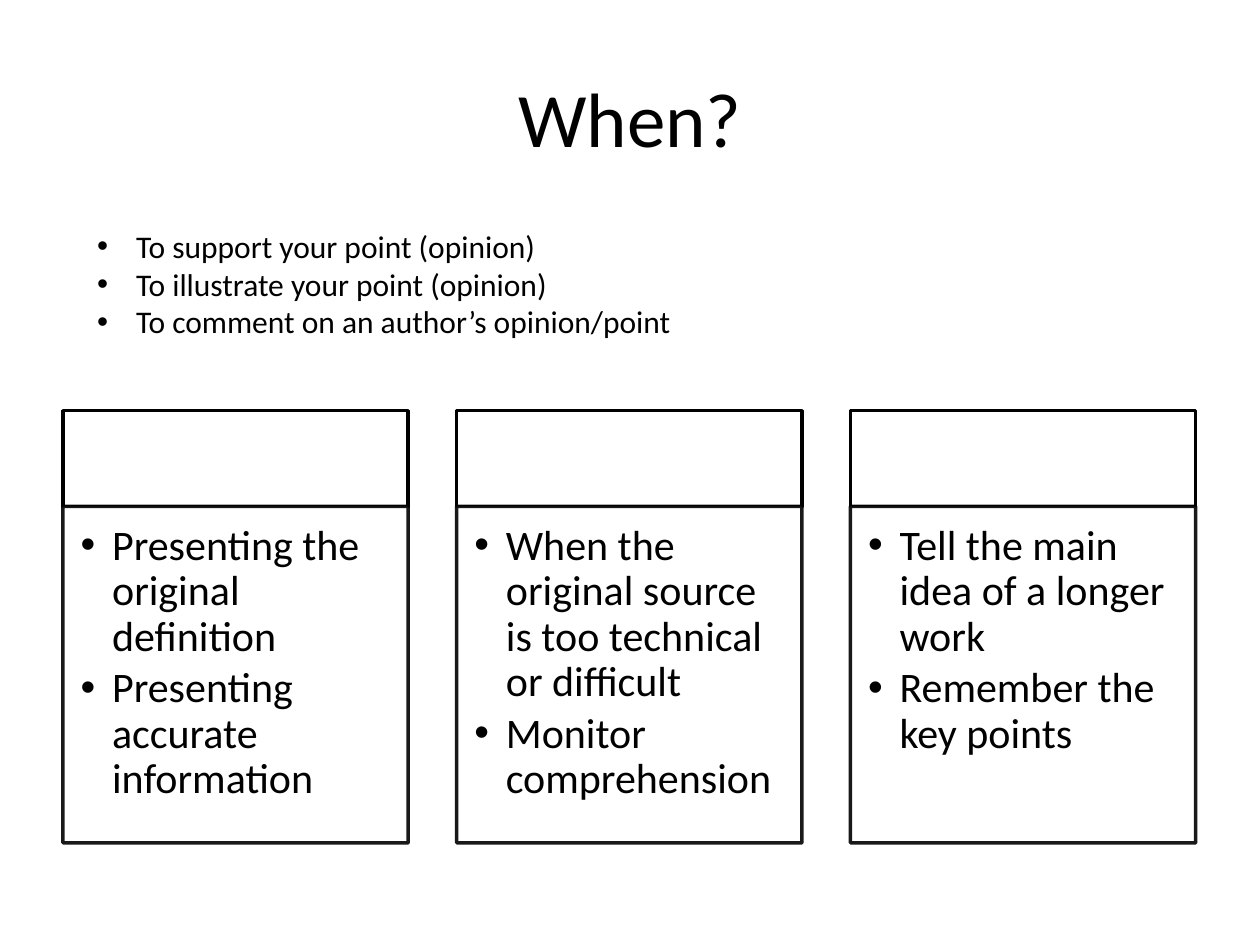
import pptx
import pptx.dml.color
import pptx.enum.shapes
import pptx.enum.text
import pptx.oxml
import pptx.oxml.ns
import pptx.util
from pptx.util import Inches

BLACK = pptx.dml.color.RGBColor(0x00, 0x00, 0x00)
WHITE = pptx.dml.color.RGBColor(0xFF, 0xFF, 0xFF)

REASONS = [
    "To support your point (opinion)",
    "To illustrate your point (opinion)",
    "To comment on an author’s opinion/point",
]
CARDS = [
    ["Presenting the original definition", "Presenting accurate information"],
    ["When the original source is too technical or difficult", "Monitor comprehension"],
    ["Tell the main idea of a longer work", "Remember the key points"],
]

CARD_LEFT, CARD_TOP = 0.5, 3.26
CARD_WIDTH, CARD_STEP = 2.74, 3.125
HEADER_HEIGHT, BODY_HEIGHT = 0.76, 2.67


class SlideBuilder:
    font_name = "Calibri"
    line_width = pptx.util.Pt(2)

    def __init__(self, presentation):
        self.slide = presentation.slides.add_slide(presentation.slide_layouts[1])

    def place(self, shape, left, top, width, height):
        shape.left, shape.top = Inches(left), Inches(top)
        shape.width, shape.height = Inches(width), Inches(height)

    def add_run(self, paragraph, text, size):
        run = paragraph.add_run()
        run.text = text
        run.font.name = self.font_name
        run.font.size = pptx.util.Pt(size)
        run.font.color.rgb = BLACK

    def title(self, text, *box):
        shape = self.slide.shapes.title
        self.place(shape, *box)
        shape.text_frame.vertical_anchor = pptx.enum.text.MSO_ANCHOR.MIDDLE
        paragraph = shape.text_frame.paragraphs[0]
        paragraph.alignment = pptx.enum.text.PP_ALIGN.CENTER
        self.add_run(paragraph, text, 44)

    def bullets(self, text_frame, items, size, indent, line_spacing=1.0, space_after=0):
        text_frame.word_wrap = True
        text_frame.vertical_anchor = pptx.enum.text.MSO_ANCHOR.TOP
        for index, item in enumerate(items):
            paragraph = text_frame.add_paragraph() if index else text_frame.paragraphs[0]
            paragraph.alignment = pptx.enum.text.PP_ALIGN.LEFT
            paragraph.line_spacing = line_spacing
            paragraph.space_before = pptx.util.Pt(0)
            paragraph.space_after = pptx.util.Pt(space_after)
            properties = paragraph._p.get_or_add_pPr()
            properties.set("marL", str(Inches(indent)))
            properties.set("indent", str(-Inches(indent)))
            namespace = pptx.oxml.ns.nsdecls("a")
            properties.append(pptx.oxml.parse_xml(f'<a:buFont {namespace} typeface="Arial"/>'))
            properties.append(pptx.oxml.parse_xml(f'<a:buChar {namespace} char="•"/>'))
            self.add_run(paragraph, item, size)

    def list(self, items, *box):
        shape = self.slide.placeholders[1]
        self.place(shape, *box)
        self.bullets(shape.text_frame, items, size=18, indent=0.31)

    def rectangle(self, parent, left, top, width, height, opacity=100):
        shape = parent.shapes.add_shape(
            pptx.enum.shapes.MSO_SHAPE.RECTANGLE,
            Inches(left), Inches(top), Inches(width), Inches(height))
        shape.shadow.inherit = False
        shape.fill.solid()
        shape.fill.fore_color.rgb = WHITE
        shape.line.color.rgb = BLACK
        shape.line.width = self.line_width
        if opacity < 100:
            for color in shape._element.spPr.iter(pptx.oxml.ns.qn("a:srgbClr")):
                alpha = color.makeelement(pptx.oxml.ns.qn("a:alpha"), {"val": str(opacity * 1000)})
                color.append(alpha)
        return shape

    def card(self, group, left, items):
        """An empty header box with a bulleted box right below it."""
        self.rectangle(group, left, CARD_TOP, CARD_WIDTH, HEADER_HEIGHT)
        body = self.rectangle(
            group, left, CARD_TOP + HEADER_HEIGHT, CARD_WIDTH, BODY_HEIGHT, opacity=90)
        text_frame = body.text_frame
        text_frame.margin_left = text_frame.margin_top = Inches(0.14)
        text_frame.margin_right, text_frame.margin_bottom = Inches(0.19), Inches(0.21)
        self.bullets(text_frame, items, size=24, indent=0.25, line_spacing=0.9, space_after=3.6)


def main():
    presentation = pptx.Presentation()
    presentation.slide_width, presentation.slide_height = Inches(10), Inches(7.5)
    builder = SlideBuilder(presentation)
    builder.title("When?", 0.5, 0.3, 9, 1.25)
    builder.list(REASONS, 0.67, 1.75, 8.92, 1.01)
    group = builder.slide.shapes.add_group_shape()
    for index, items in enumerate(CARDS):
        builder.card(group, CARD_LEFT + index * CARD_STEP, items)
    presentation.save("out.pptx")


if __name__ == "__main__":
    main()
